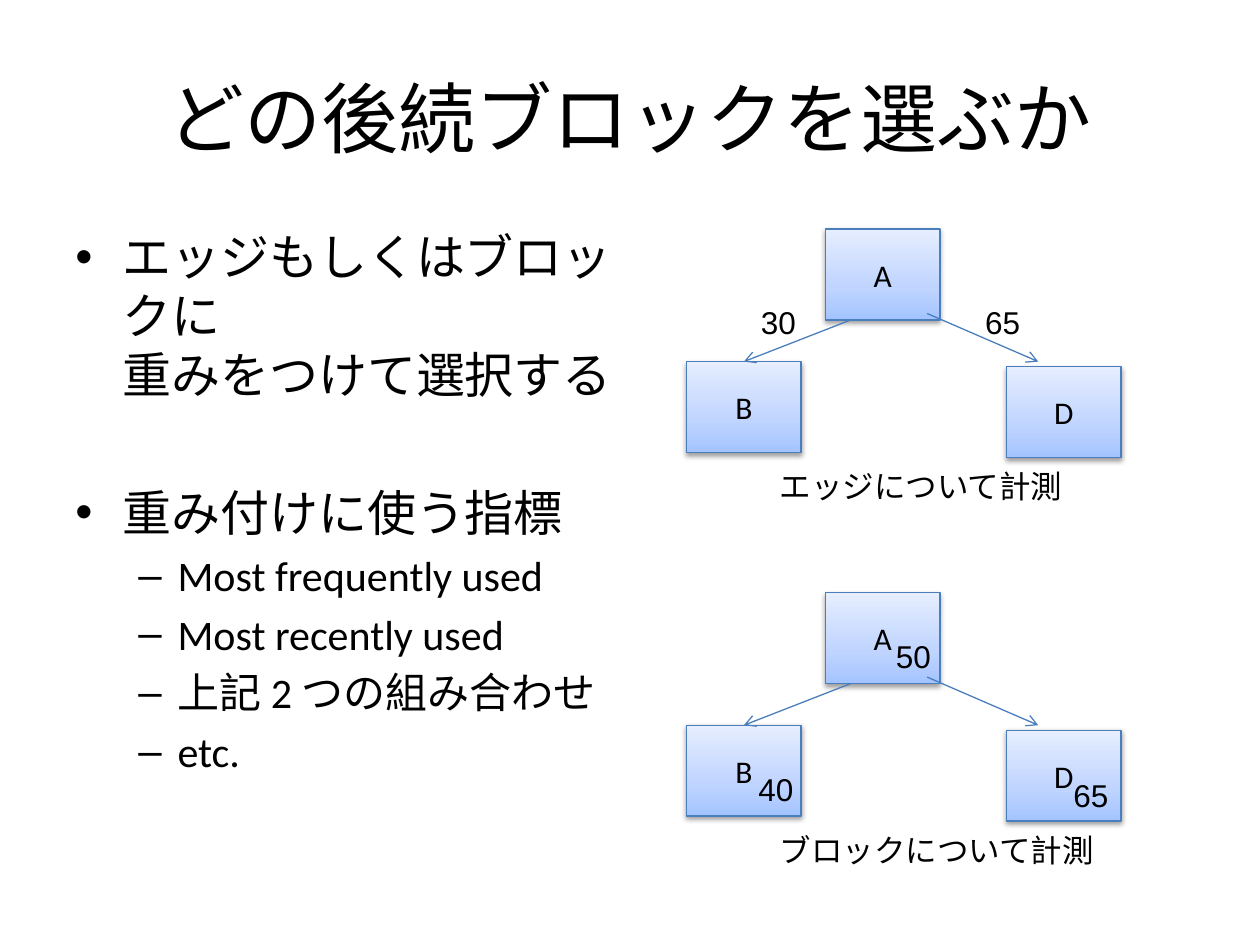
from dataclasses import dataclass

from lxml import etree
from pptx import Presentation
from pptx.dml.color import RGBColor
from pptx.enum.shapes import MSO_CONNECTOR, MSO_SHAPE
from pptx.enum.text import MSO_ANCHOR, MSO_AUTO_SIZE, PP_ALIGN
from pptx.oxml import parse_xml
from pptx.oxml.ns import nsdecls, qn
from pptx.util import Cm, Pt

RECT = MSO_SHAPE.RECTANGLE
LINE = MSO_CONNECTOR.STRAIGHT
MIDDLE = MSO_ANCHOR.MIDDLE
CENTER = PP_ALIGN.CENTER
LEFT = PP_ALIGN.LEFT
GROW = MSO_AUTO_SIZE.SHAPE_TO_FIT_TEXT
FIXED = MSO_AUTO_SIZE.NONE

HEX = {"text": "000000", "line": "4B7EBC", "low": "A4C4FF", "mid": "BFD4FF", "high": "E6EEFF"}
STOPS = {0: "low", 35000: "mid", 100000: "high"}

BOX_W, BOX_H = 2.31, 1.83
TREE_TOP, TREE_STEP = 4.62, 7.33
BRANCH = (18.69, 1.7, 20.93, 2.67)
STEM = (17.15, BOX_H)


@dataclass
class Node:
    name: str
    x: float
    dy: float


@dataclass
class Label:
    text: str
    x: float
    dy: float
    width: float = 1.96


@dataclass
class Item:
    text: str
    level: int
    before: float


NODES = [Node("A", 16.64, 0), Node("D", 20.29, 2.77), Node("B", 13.84, 2.67)]

TREES = [
    [Label("65", 19.61, 1.37), Label("30", 15.09, 1.37),
     Label("エッジについて計測", 15.47, 4.67, 7.8)],
    [Label("65", 21.39, 3.56), Label("40", 15.04, 3.45), Label("50", 17.81, 0.76),
     Label("ブロックについて計測", 15.47, 4.67, 7.8)],
]

ITEMS = [
    Item("エッジもしくはブロックに\v重みをつけて選択する", 0, 5.6),
    Item("重み付けに使う指標", 0, 45),
    Item("Most frequently used", 1, 4.8),
    Item("Most recently used", 1, 4.8),
    Item("上記 2 つの組み合わせ", 1, 4.8),
    Item("etc.", 1, 4.8),
]
# Bullet, text size, left margin and hanging indent of each level
LEVELS = [("•", 28, 0.95, 0.95), ("–", 24, 2.06, 0.79)]


def apply(target, values: dict) -> None:
    for name, value in values.items():
        setattr(target, name, value)


def write(para, text: str, size: float, face: str, align=LEFT) -> None:
    para.text = text
    para.alignment = align
    for run in para.runs:
        apply(run.font, {"size": Pt(size), "name": face})
        run.font.color.rgb = RGBColor.from_string(HEX["text"])


def add_frame(slide, x: float, y: float, w: float, h: float, **values):
    frame = slide.shapes.add_textbox(Cm(x), Cm(y), Cm(w), Cm(h)).text_frame
    apply(frame, {"word_wrap": True, "auto_size": FIXED} | values)
    return frame


def add_list(slide) -> None:
    frame = add_frame(slide, 1.27, 4.45, 12.04, 12.57)
    for i, item in enumerate(ITEMS):
        para = frame.add_paragraph() if i else frame.paragraphs[0]
        mark, size, margin, hang = LEVELS[item.level]
        write(para, item.text, size, "Calibri")
        apply(para, {"level": item.level, "space_before": Pt(item.before)})
        props = para._p.get_or_add_pPr()
        props.set("marL", str(Cm(margin)))
        props.set("indent", str(-Cm(hang)))
        etree.SubElement(props, qn("a:buFont"), typeface="Arial")
        etree.SubElement(props, qn("a:buChar"), char=mark)


def set_line(shape) -> None:
    shape.line.color.rgb = RGBColor.from_string(HEX["line"])
    shape.line.width = Pt(0.75)


def shade(shape) -> None:
    """Give the shape its three-stop gradient and soft shadow below."""
    stops = "".join(f'<a:gs pos="{pos}"><a:srgbClr val="{HEX[key]}"/></a:gs>'
                    for pos, key in STOPS.items())
    props = shape._element.spPr
    props.find(qn("a:prstGeom")).addnext(parse_xml(
        f'<a:gradFill {nsdecls("a")} rotWithShape="1"><a:gsLst>{stops}</a:gsLst>'
        '<a:lin ang="16200000" scaled="0"/></a:gradFill>'))
    shape.shadow.inherit = False
    props.find(qn("a:effectLst")).append(parse_xml(
        f'<a:outerShdw {nsdecls("a")} blurRad="{Pt(3.1)}" dist="{Pt(1.6)}" dir="5400000" '
        f'rotWithShape="0"><a:srgbClr val="{HEX["text"]}"><a:alpha val="38000"/>'
        '</a:srgbClr></a:outerShdw>'))


def add_node(slide, node: Node, top: float):
    box = slide.shapes.add_shape(RECT, Cm(node.x), Cm(top + node.dy), Cm(BOX_W), Cm(BOX_H))
    set_line(box)
    shade(box)
    box.text_frame.vertical_anchor = MIDDLE
    write(box.text_frame.paragraphs[0], node.name, 18, "Calibri", CENTER)
    return box


def add_arrow(slide, x1: float, y1: float, x2: float, y2: float):
    arrow = slide.shapes.add_connector(LINE, Cm(x1), Cm(y1), Cm(x2), Cm(y2))
    set_line(arrow)
    props = arrow._element.spPr
    etree.SubElement(props.find(qn("a:ln")), qn("a:tailEnd"), type="arrow")
    etree.SubElement(props, qn("a:effectLst"))
    return arrow


def add_tree(slide, labels: list[Label], top: float) -> None:
    boxes = {node.name: add_node(slide, node, top) for node in NODES}
    x1, y1, x2, y2 = BRANCH
    add_arrow(slide, x1, top + y1, x2, top + y2)
    x, y = STEM
    add_arrow(slide, x, top + y, x, top + y).end_connect(boxes["B"], 0)
    for label in labels:
        frame = add_frame(slide, label.x, top + label.dy, label.width, 1.02, auto_size=GROW)
        write(frame.paragraphs[0], label.text, 18, "Arial")


def main() -> None:
    deck = Presentation()
    apply(deck, {"slide_width": Cm(25.4), "slide_height": Cm(19.05)})
    slide = deck.slides.add_slide(deck.slide_layouts[6])
    title = add_frame(slide, 1.27, 0.76, 22.86, 3.18, vertical_anchor=MIDDLE)
    write(title.paragraphs[0], "どの後続ブロックを選ぶか", 44, "Calibri", CENTER)
    add_list(slide)
    for i, labels in enumerate(TREES):
        add_tree(slide, labels, TREE_TOP + i * TREE_STEP)
    deck.save("out.pptx")


if __name__ == "__main__":
    main()
